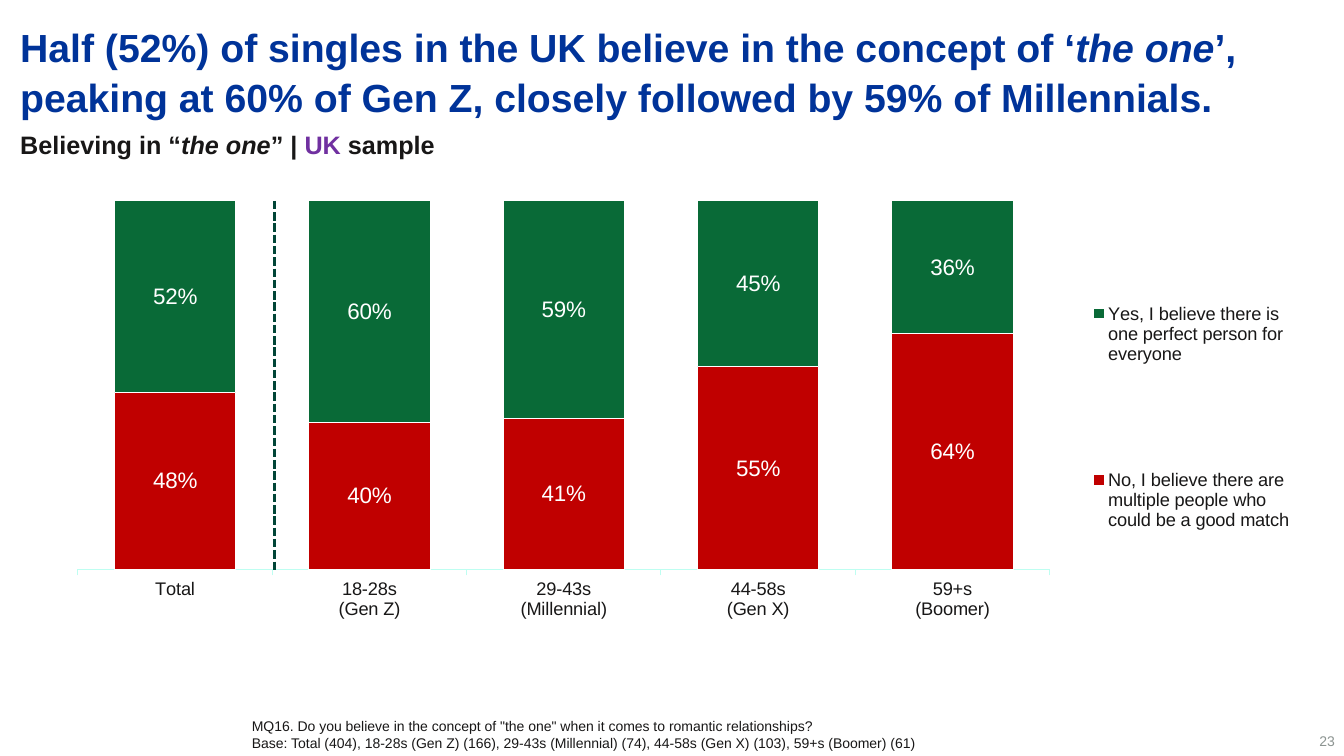
from lxml.etree import SubElement as Sub
from pptx import Presentation
from pptx.chart.data import CategoryChartData as Data
from pptx.dml.color import RGBColor
from pptx.enum.chart import XL_CHART_TYPE as Kind, XL_LEGEND_POSITION as Side
from pptx.enum.chart import XL_TICK_MARK as Tick
from pptx.enum.dml import MSO_LINE as Dash
from pptx.enum.shapes import MSO_CONNECTOR as Link
from pptx.enum.text import MSO_ANCHOR as Anchor, MSO_AUTO_SIZE as Auto, PP_ALIGN as Align
from pptx.oxml.ns import qn
from pptx.util import Inches as In, Pt

WIDE, HIGH = 13.33, 7.5
FACE, INK, BLUE, PLUM, PINE = "Arial", "181717", "003399", "7030A0", "014537"

TITLE = [[("Half (52%) of singles in the UK believe in the concept of ‘", {}),
          ("the one", {"ital": True}),
          ("’, peaking at 60% of Gen Z, closely followed by 59% of Millennials.", {})]]
TOPIC = [[("Believing in “", {}), ("the one", {"ital": True}), ("” | ", {}),
          ("UK", {"tint": PLUM}), (" sample", {})]]
NOTES = [
    [('MQ16. Do you believe in the concept of "the one" when it comes to romantic relationships?', {})],
    [("Base: Total (404), 18-28s (Gen Z) (166), 29-43s (Millennial) (74), "
      "44-58s (Gen X) (103), 59+s (Boomer) (61)", {})],
]
PAGE = [[("23", {})]]
GROUPS = ["Total", "18-28s\n(Gen Z)", "29-43s\n(Millennial)", "44-58s\n(Gen X)", "59+s\n(Boomer)"]
VIEWS = [
    ("No, I believe there are multiple people who could be a good match",
     "C00000", (0.48, 0.40, 0.41, 0.55, 0.64)),
    ("Yes, I believe there is one perfect person for everyone",
     "096A37", (0.52, 0.60, 0.59, 0.45, 0.36)),
]
CHART = (0.45, 1.6, 12.42, 5.24)
PLOT = (0.026, 0.075, 0.776, 0.698)
KEY = (0.83, 0.07, 0.17, 0.83)


def shade(code):
    return RGBColor.from_string(code)


def style(font, size, tint, bold=False, ital=False):
    font.name, font.size, font.bold, font.italic = FACE, Pt(size), bold, ital
    font.color.rgb = shade(tint)


def write(shape, paras, size, tint=INK, bold=False, align=Align.LEFT,
          anchor=Anchor.TOP, inset=(0, 0), lead=1.0):
    frame = shape.text_frame
    frame.word_wrap, frame.auto_size = True, Auto.NONE
    frame.vertical_anchor = anchor
    frame.margin_left = frame.margin_right = In(inset[0])
    frame.margin_top = frame.margin_bottom = In(inset[1])
    for i, parts in enumerate(paras):
        para = frame.add_paragraph() if i else frame.paragraphs[0]
        para.alignment, para.line_spacing = align, lead
        para.space_before = Pt(0)
        for words, extra in parts:
            run = para.add_run()
            run.text = words
            style(run.font, **{"size": size, "tint": tint, "bold": bold, **extra})


def place(node, area, inner=False):
    for old in node.findall(qn("c:layout")):
        node.remove(old)
    outer = Sub(node, qn("c:layout"))
    man = Sub(outer, qn("c:manualLayout"))
    rules = [("layoutTarget", "inner")] if inner else []
    rules += [("xMode", "edge"), ("yMode", "edge")]
    rules += zip("xywh", area)
    for tag, val in rules:
        Sub(man, qn("c:" + tag)).set("val", str(val))
    node.remove(outer)
    return outer


def box(slide, left, top, wide, high):
    return slide.shapes.add_textbox(In(left), In(top), In(wide), In(high))


def draw(slide):
    data = Data(number_format="0%")
    data.categories = GROUPS
    for name, tint, vals in VIEWS:
        data.add_series(name, vals)
    chart = slide.shapes.add_chart(Kind.COLUMN_STACKED_100, *map(In, CHART), data).chart
    style(chart.font, 10, PINE)
    chart.has_title = False

    plot = chart.plots[0]
    plot.gap_width, plot.overlap, plot.vary_by_categories = 60, 100, False
    for bars, (name, tint, vals) in zip(plot.series, VIEWS):
        bars.format.fill.solid()
        bars.format.fill.fore_color.rgb = shade(tint)
        bars.format.line.color.rgb = shade("FFFFFF")
        bars.format.line.width = Pt(0.75)
        tags = bars.data_labels
        tags.show_value = True
        tags.number_format, tags.number_format_is_linked = "0%", False
        style(tags.font, 16, "FFFFFF")

    base = chart.category_axis
    base.major_tick_mark = Tick.OUTSIDE
    base.format.line.color.rgb = shade("BEFEF1")
    base.format.line.width = Pt(0.75)
    style(base.tick_labels.font, 13, INK)
    scale = chart.value_axis
    scale.minimum_scale, scale.maximum_scale, scale.major_unit = 0, 1, 0.2
    scale.has_major_gridlines = scale.visible = False

    chart.has_legend = True
    key = chart.legend
    key.position, key.include_in_layout = Side.RIGHT, False
    style(key.font, 13, INK)
    node = key._element
    node.find(qn("c:legendPos")).addnext(place(node, KEY))
    area = chart._chartSpace.chart.plotArea
    area.insert(0, place(area, PLOT, True))


def rule(slide):
    left, top, wide, high = CHART
    step = PLOT[2] * wide / len(GROUPS)
    x = left + PLOT[0] * wide + step + 0.02
    y = top + PLOT[1] * high
    line = slide.shapes.add_connector(Link.STRAIGHT, In(x), In(y), In(x), In(y + PLOT[3] * high))
    line.line.color.rgb = shade(PINE)
    line.line.width, line.line.dash_style = Pt(2), Dash.SQUARE_DOT
    Sub(line._element.spPr, qn("a:effectLst"))


def main():
    deck = Presentation()
    deck.slide_width, deck.slide_height = In(WIDE), In(HIGH)
    slide = deck.slides.add_slide(deck.slide_layouts[5])
    head = slide.shapes.title
    head.left, head.top, head.width, head.height = map(In, (0.2, 0.21, 12.86, 0.95))
    write(head, TITLE, 28, BLUE, True, lead=1.05)
    draw(slide)
    write(box(slide, 0.2, 1.28, 12.57, 0.37), TOPIC, 18, bold=True)
    write(box(slide, 2.4, 7.07, 10.47, 0.44), NOTES, 10, inset=(0.1, 0.05))
    write(box(slide, 12.65, 7.19, 0.59, 0.24), PAGE, 10, "8C9491",
          align=Align.RIGHT, anchor=Anchor.BOTTOM)
    rule(slide)
    deck.save("out.pptx")


if __name__ == "__main__":
    main()
